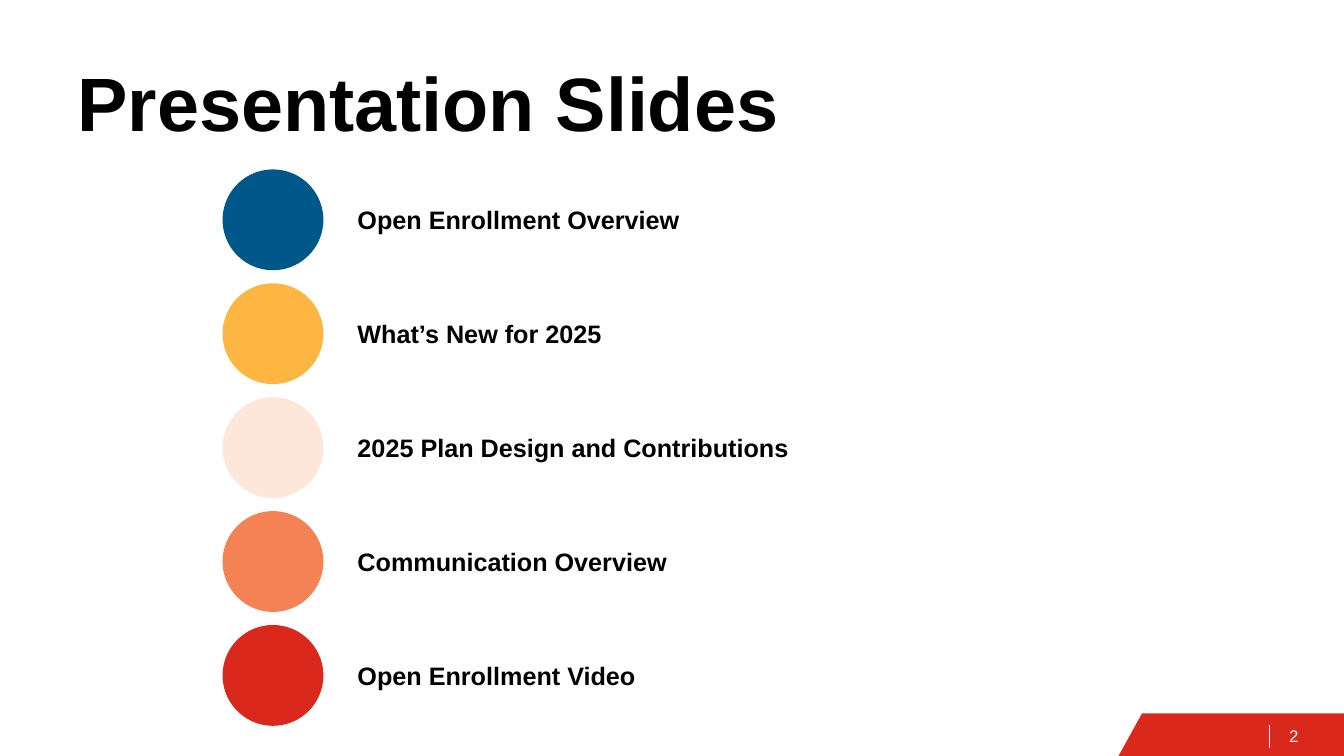
from dataclasses import dataclass

from lxml import etree
from pptx import Presentation
from pptx.dml.color import RGBColor
from pptx.enum.shapes import MSO_CONNECTOR, MSO_SHAPE
from pptx.enum.text import MSO_ANCHOR
from pptx.oxml.ns import qn
from pptx.util import Cm, Pt

OVAL = MSO_SHAPE.OVAL
STRAIGHT = MSO_CONNECTOR.STRAIGHT
MIDDLE = MSO_ANCHOR.MIDDLE

FONT = "Arial"
BLACK, WHITE, RED = "000000", "FFFFFF", "DA281C"
SLIDE_W, SLIDE_H = 33.87, 19.05

CIRCLE_LEFT, CIRCLE_TOP, DIAMETER = 5.61, 4.27, 2.54
ROW_PITCH = 2.87
LABEL_LEFT, LABEL_W, LABEL_H = 8.76, 13.4, 1.02


@dataclass
class Topic:
    label: str
    color: str


TOPICS = [
    Topic("Open Enrollment Overview", "00578A"),
    Topic("What’s New for 2025", "FCB641"),
    Topic("2025 Plan Design and Contributions", "FDE7DA"),
    Topic("Communication Overview", "F48254"),
    Topic("Open Enrollment Video", RED),
]


def rgb(color: str) -> RGBColor:
    return RGBColor.from_string(color)


def paint(sp, color: str) -> None:
    """Give a shape a plain fill without outline or shadow."""
    sp.shadow.inherit = False
    sp.fill.solid()
    sp.fill.fore_color.rgb = rgb(color)
    sp.line.fill.background()


def add_text(s, text: str, left: float, top: float, width: float, height: float,
             size: float, color: str = BLACK, bold: bool = True):
    tf = s.shapes.add_textbox(Cm(left), Cm(top), Cm(width), Cm(height)).text_frame
    tf.word_wrap = True
    tf.vertical_anchor = MIDDLE
    p = tf.paragraphs[0]
    p.text = text
    p.font.name = FONT
    p.font.size = Pt(size)
    p.font.bold = bold
    p.font.color.rgb = rgb(color)
    return tf


def add_topic(s, topic: Topic, row: int) -> None:
    top = CIRCLE_TOP + row * ROW_PITCH
    circle = s.shapes.add_shape(OVAL, Cm(CIRCLE_LEFT), Cm(top), Cm(DIAMETER), Cm(DIAMETER))
    paint(circle, topic.color)
    label_top = top + (DIAMETER - LABEL_H) / 2
    add_text(s, topic.label, LABEL_LEFT, label_top, LABEL_W, LABEL_H, 18)


def add_footer(s) -> None:
    builder = s.shapes.build_freeform(Cm(28.19), Cm(SLIDE_H))
    corners = [(28.78, 17.98), (SLIDE_W, 17.98), (SLIDE_W, SLIDE_H)]
    builder.add_line_segments([(Cm(x), Cm(y)) for x, y in corners], close=True)
    paint(builder.convert_to_shape(), RED)

    number = add_text(s, "2", 32.16, 18.03, 1.7, 1.02, 12, WHITE, bold=False)
    number.margin_left = number.margin_right = Cm(0.33)
    number.margin_top = number.margin_bottom = Cm(0.18)

    divider = s.shapes.add_connector(STRAIGHT, Cm(32), Cm(18.26), Cm(32), Cm(18.85))
    divider.line.color.rgb = rgb(WHITE)
    divider.line.width = Pt(0.75)
    etree.SubElement(divider._element.spPr, qn("a:effectLst"))


def main() -> None:
    prs = Presentation()
    prs.slide_width, prs.slide_height = Cm(SLIDE_W), Cm(SLIDE_H)
    s = prs.slides.add_slide(prs.slide_layouts[6])
    add_footer(s)
    title = add_text(s, "Presentation Slides", 1.7, 1.02, 29.85, 3.68, 54)
    title.paragraphs[0].line_spacing = Pt(48)
    for row, topic in enumerate(TOPICS):
        add_topic(s, topic, row)
    prs.save("out.pptx")


if __name__ == "__main__":
    main()
